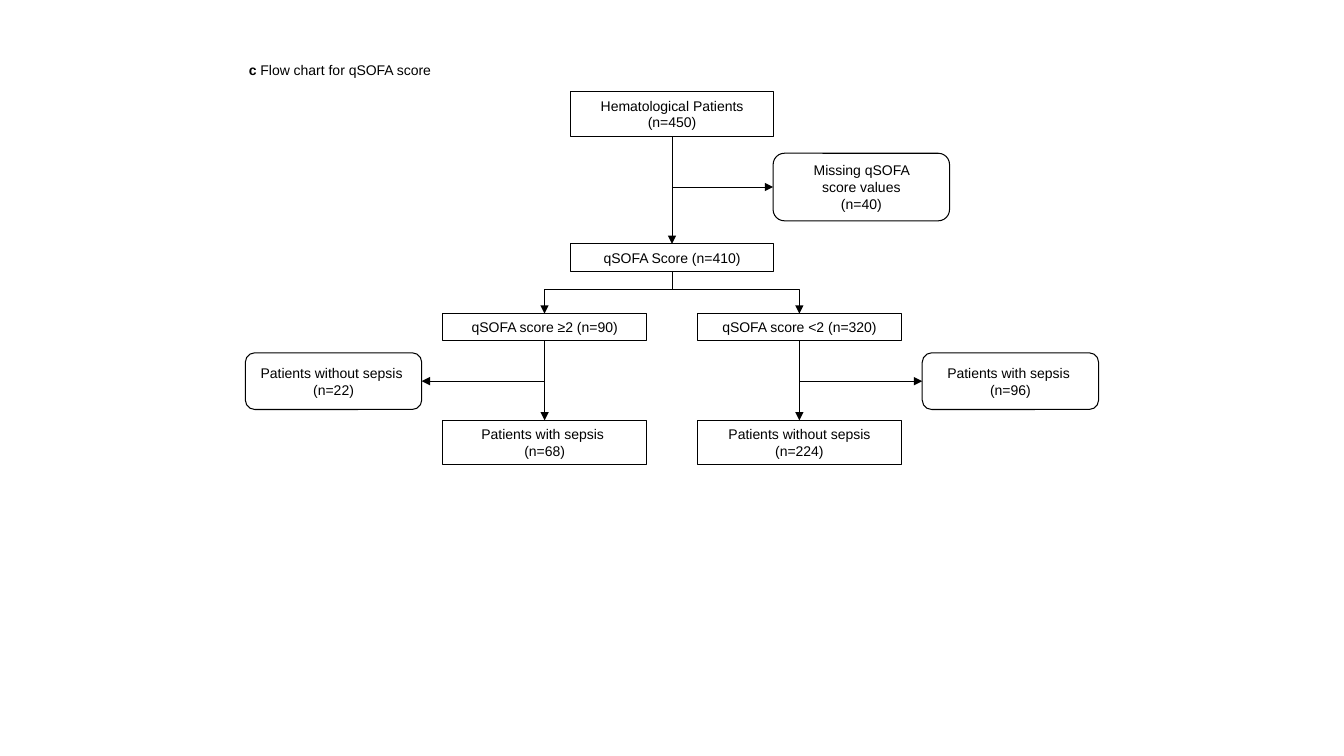
from dataclasses import dataclass

from lxml.etree import SubElement
from pptx import Presentation
from pptx.dml.color import RGBColor
from pptx.enum.shapes import MSO_CONNECTOR as Connector, MSO_SHAPE as Shape
from pptx.enum.text import MSO_ANCHOR as Anchor, MSO_AUTO_SIZE as AutoSize, PP_ALIGN as Align
from pptx.oxml.ns import qn
from pptx.util import Pt


@dataclass(frozen=True)
class Theme:
    ink: RGBColor = RGBColor(0, 0, 0)
    font: str = "Arial"
    text_size: float = 10
    outline: float = 0.75
    arrow: float = 0.5


@dataclass(frozen=True)
class Box:
    left: float
    top: float
    width: float
    height: float


THEME = Theme()
TOP, LEFT, BOTTOM, RIGHT = range(4)  # connection sites of a rectangle


def format_text(text_frame, alignment):
    text_frame.word_wrap = True
    text_frame.auto_size = AutoSize.NONE
    text_frame.vertical_anchor = Anchor.MIDDLE
    for paragraph in text_frame.paragraphs:
        paragraph.alignment = alignment
        for run in paragraph.runs:
            run.font.name = THEME.font
            run.font.size = Pt(THEME.text_size)
            run.font.color.rgb = THEME.ink


def add_node(slide, box, text, preset=Shape.RECTANGLE, inset=7.2):
    node = slide.shapes.add_shape(
        preset, Pt(box.left), Pt(box.top), Pt(box.width), Pt(box.height))
    node.shadow.inherit = False
    node.fill.background()
    node.line.color.rgb = THEME.ink
    node.line.width = Pt(THEME.outline)
    frame = node.text_frame
    frame.text = text
    frame.margin_left = frame.margin_right = Pt(inset)
    frame.margin_top = frame.margin_bottom = Pt(3.6)
    format_text(frame, Align.CENTER)
    return node


def add_line(slide, start, end, kind=Connector.STRAIGHT, arrowhead=True):
    line = slide.shapes.add_connector(kind, *map(Pt, start + end))
    line.line.color.rgb = THEME.ink
    line.line.width = Pt(THEME.arrow)
    properties = line._element.spPr
    if kind == Connector.ELBOW:  # a single bend: across, then down
        properties.find(qn("a:prstGeom")).set("prst", "bentConnector2")
    if arrowhead:
        SubElement(properties.find(qn("a:ln")), qn("a:tailEnd"), type="triangle")
    SubElement(properties, qn("a:effectLst"))
    return line


def add_stem(slide, upper, lower, x):
    """Arrow down from one node to the next."""
    stem = add_line(slide, (x, 0), (x, 0))
    stem.begin_connect(upper, BOTTOM)
    stem.end_connect(lower, TOP)


def add_side_node(slide, box, text, stem_x, inset=7.2):
    """Rounded node beside a stem, with the arrow that leads to it."""
    node = add_node(slide, box, text, Shape.ROUNDED_RECTANGLE, inset)
    middle = box.top + box.height / 2
    on_right = box.left > stem_x
    edge = box.left if on_right else box.left + box.width
    branch = add_line(slide, (stem_x, middle), (edge, middle))
    branch.end_connect(node, LEFT if on_right else RIGHT)


def add_caption(slide, box):
    title = slide.shapes.title
    title.left, title.top = Pt(box.left), Pt(box.top)
    title.width, title.height = Pt(box.width), Pt(box.height)
    frame = title.text_frame
    frame.margin_left = frame.margin_right = Pt(7.2)
    frame.margin_top = frame.margin_bottom = Pt(3.6)
    paragraph = frame.paragraphs[0]
    for text, bold in (("c ", True), ("Flow chart for qSOFA score", False)):
        run = paragraph.add_run()
        run.text = text
        run.font.bold = bold
    format_text(frame, Align.LEFT)


def add_flow_chart(slide, box):
    axis = box.left + box.width / 2
    node_width, side_width = 145.5, 126
    low, tall = 19.5, 31.75
    score_top, group_top, result_top = (box.top + y for y in (108.75, 158.5, 234.75))

    def centred(x, top, height):
        return Box(x - node_width / 2, top, node_width, height)

    # Trunk: all patients, exclusions, scored patients
    patients = add_node(slide, centred(axis, box.top, tall), "Hematological Patients (n=450)")
    score = add_node(slide, centred(axis, score_top, low), "qSOFA Score (n=410)")
    add_stem(slide, patients, score, axis)
    missing = Box(axis + node_width / 2 - 0.5, box.top + 44, side_width, 48.25)
    add_side_node(slide, missing, "Missing qSOFA score values\n(n=40)", axis, inset=13.5)

    # Fork into the two score groups
    fork_y = score_top + low + 13
    add_line(slide, (axis, score_top + low), (axis, fork_y), arrowhead=False)
    branches = (
        (-1, "qSOFA score ≥2 (n=90)", "Patients with sepsis \n(n=68)",
         "Patients without sepsis \n(n=22)"),
        (1, "qSOFA score <2 (n=320)", "Patients without sepsis (n=224)",
         "Patients with sepsis \n(n=96)"),
    )
    for side, group_text, result_text, side_text in branches:
        x = axis + side * 91
        add_line(slide, (axis, fork_y), (x, group_top), Connector.ELBOW)
        group = add_node(slide, centred(x, group_top, low), group_text)
        result = add_node(slide, centred(x, result_top, tall), result_text)
        add_stem(slide, group, result, x)
        side_left = box.left if side < 0 else box.left + box.width - side_width
        add_side_node(slide, Box(side_left, box.top + 186.5, side_width, 40.5), side_text, x)


def main():
    presentation = Presentation()
    presentation.slide_width, presentation.slide_height = Pt(960), Pt(540)
    slide = presentation.slides.add_slide(presentation.slide_layouts[5])
    add_caption(slide, Box(170.5, 40.25, 265.5, 19.5))
    add_flow_chart(slide, Box(175.25, 65.5, 609.5, 266.5))
    presentation.save("out.pptx")


if __name__ == "__main__":
    main()
